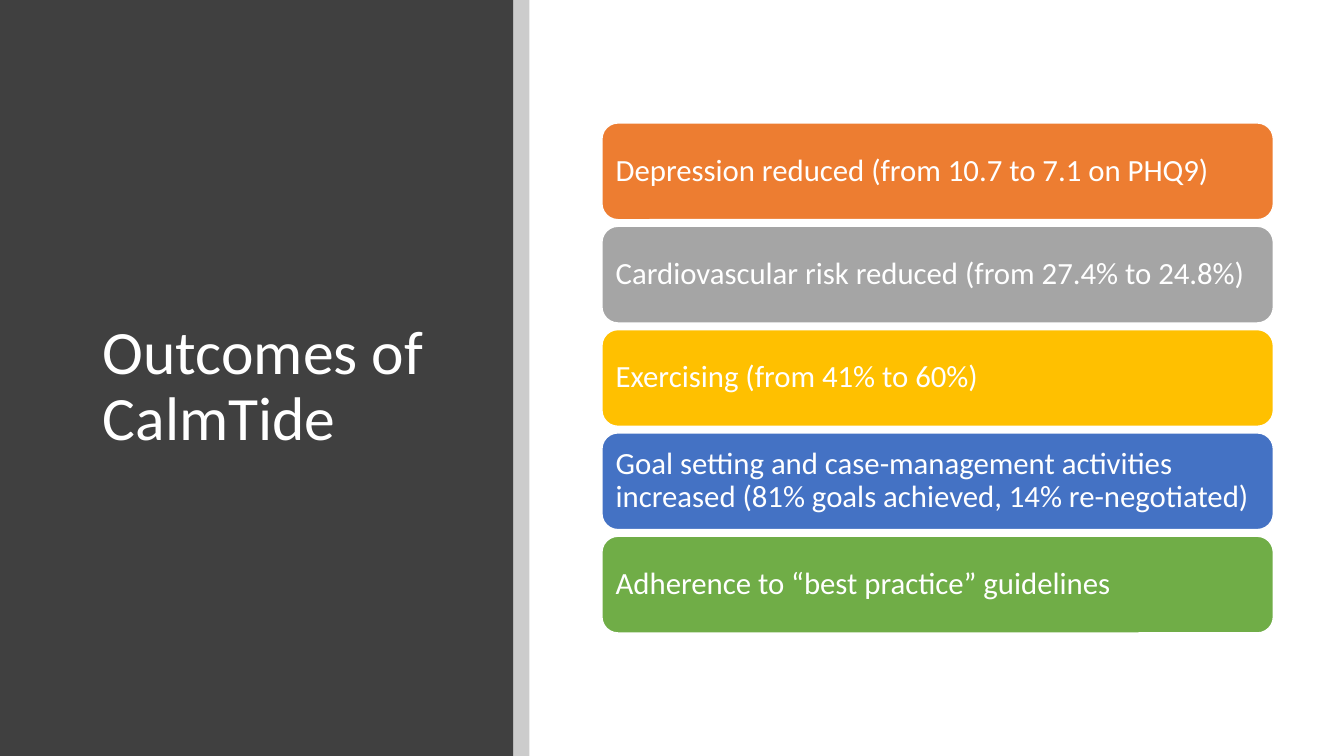
from lxml import etree
from pptx import Presentation
from pptx.dml.color import RGBColor
from pptx.enum.shapes import MSO_SHAPE
from pptx.enum.text import MSO_ANCHOR, MSO_AUTO_SIZE, PP_ALIGN
from pptx.oxml.ns import qn
from pptx.util import Inches, Pt

RECTANGLE = MSO_SHAPE.RECTANGLE
ROUNDED = MSO_SHAPE.ROUNDED_RECTANGLE
MIDDLE = MSO_ANCHOR.MIDDLE
NO_FIT = MSO_AUTO_SIZE.NONE
LEFT = PP_ALIGN.LEFT

WHITE = RGBColor(0xFF, 0xFF, 0xFF)
BLACK = RGBColor(0x00, 0x00, 0x00)
CHARCOAL = RGBColor(0x40, 0x40, 0x40)
ORANGE = RGBColor(0xED, 0x7D, 0x31)
GRAY = RGBColor(0xA5, 0xA5, 0xA5)
GOLD = RGBColor(0xFF, 0xC0, 0x00)
BLUE = RGBColor(0x44, 0x72, 0xC4)
GREEN = RGBColor(0x70, 0xAD, 0x47)

PAGE_HEIGHT = 7.5
PANEL_WIDTH = 5.09
BAR_TOP, BAR_BOTTOM_TOP = 1.22, 5.32

OUTCOMES = [
    ("Depression reduced (from 10.7 to 7.1 on PHQ9)", ORANGE),
    ("Cardiovascular risk reduced (from 27.4% to 24.8%)", GRAY),
    ("Exercising (from 41% to 60%)", GOLD),
    ("Goal setting and case-management activities increased "
     "(81% goals achieved, 14% re-negotiated)", BLUE),
    ("Adherence to “best practice” guidelines", GREEN),
]


class SlideBuilder:
    """Holds the text style and the current slide."""

    font_name = "Calibri"
    text_color = WHITE
    line_spacing = 0.9

    def __init__(self, page):
        self.page = page

    def set_text(self, box, text, size, inset):
        frame = box.text_frame
        frame.text = text
        margins = {f"margin_{side}": Inches(inset)
                   for side in ("left", "top", "right", "bottom")}
        frame_format = {"word_wrap": True, "auto_size": NO_FIT,
                        "vertical_anchor": MIDDLE, **margins}
        para = frame.paragraphs[0]
        para_format = {"alignment": LEFT, "line_spacing": self.line_spacing}
        font = para.runs[0].font
        font_format = {"name": self.font_name, "size": Pt(size)}
        for target, values in ((frame, frame_format), (para, para_format),
                               (font, font_format)):
            for name, value in values.items():
                setattr(target, name, value)
        font.color.rgb = self.text_color

    def shape(self, kind, bounds, color, opacity=None):
        box = self.page.shapes.add_shape(kind, *map(Inches, bounds))
        box.shadow.inherit = False
        box.fill.solid()
        box.fill.fore_color.rgb = color
        box.line.fill.background()
        if opacity is not None:
            solid = box.element.spPr.find(qn("a:solidFill"))
            etree.SubElement(solid[0], qn("a:alpha"), val=str(opacity * 1000))
        return box

    def title(self, text, bounds):
        box = self.page.shapes.title
        box.left, box.top, box.width, box.height = map(Inches, bounds)
        self.set_text(box, text, 44, 0.1)
        # Bring the title in front of the dark panel
        box.element.getparent().append(box.element)

    def bar(self, text, bounds, color):
        box = self.shape(ROUNDED, bounds, color)
        box.line.color.rgb = WHITE
        box.line.width = Pt(1)
        self.set_text(box, text, 22, 0.09)


def main():
    deck = Presentation()
    deck.slide_width = Inches(13.33)
    deck.slide_height = Inches(PAGE_HEIGHT)
    builder = SlideBuilder(deck.slides.add_slide(deck.slide_layouts[5]))

    # Dark title panel with its translucent edge
    builder.shape(RECTANGLE, (0, 0, PANEL_WIDTH, PAGE_HEIGHT), CHARCOAL)
    builder.title("Outcomes of CalmTide", (0.92, 0.89, 3.65, 5.91))
    builder.shape(RECTANGLE, (PANEL_WIDTH, 0, 0.16, PAGE_HEIGHT), BLACK, opacity=20)

    # Stack of outcome bars, evenly spaced
    step = (BAR_BOTTOM_TOP - BAR_TOP) / (len(OUTCOMES) - 1)
    for index, (text, color) in enumerate(OUTCOMES):
        builder.bar(text, (5.97, BAR_TOP + index * step, 6.66, 0.96), color)

    deck.save("out.pptx")


if __name__ == "__main__":
    main()
